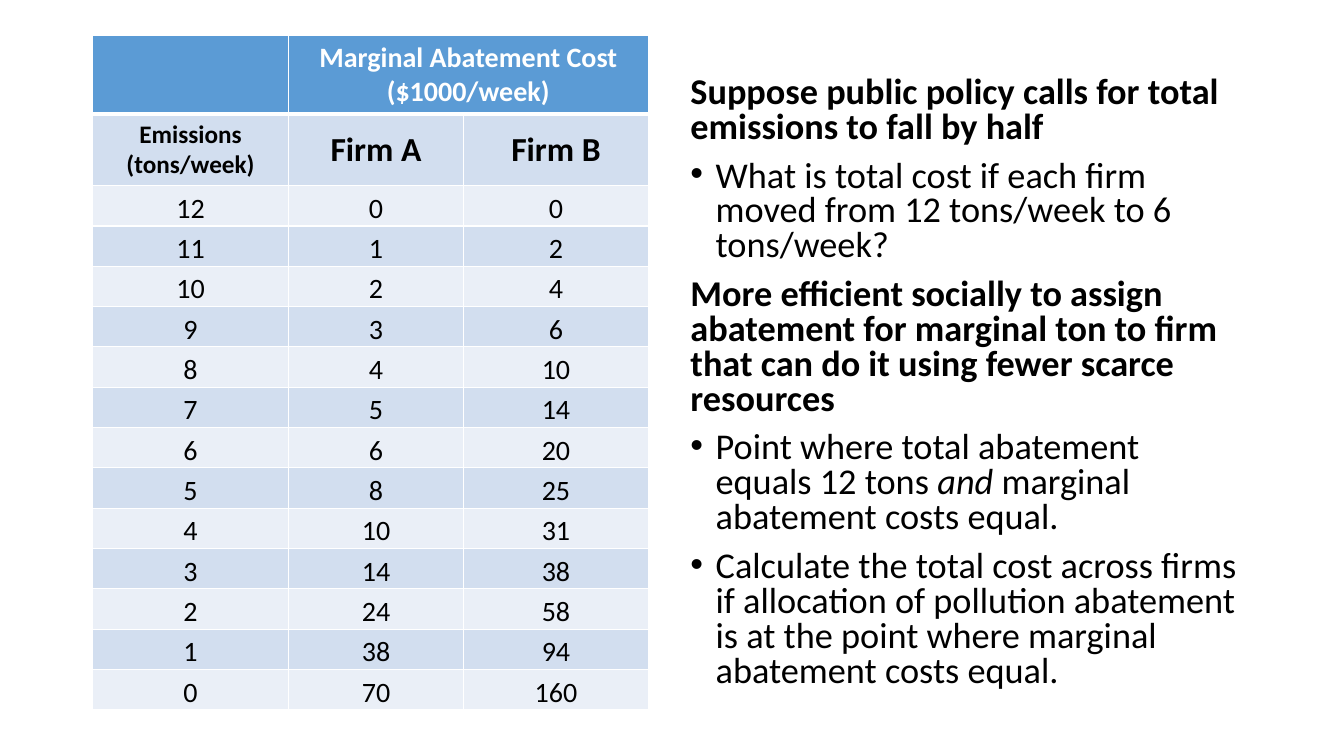
"""Build a slide on marginal abatement costs for two firms."""
import pptx
import pptx.dml.color
import pptx.enum.text
import pptx.oxml
import pptx.oxml.ns
import pptx.util
from lxml import etree

Inches = pptx.util.Inches
Pt = pptx.util.Pt
RGBColor = pptx.dml.color.RGBColor
ANCHOR = pptx.enum.text.MSO_ANCHOR

BLUE = RGBColor(0x5B, 0x9B, 0xD5)
DARK_BAND = RGBColor(0xD2, 0xDE, 0xEF)
LIGHT_BAND = RGBColor(0xEA, 0xEF, 0xF7)
WHITE = RGBColor(0xFF, 0xFF, 0xFF)
BLACK = RGBColor(0x00, 0x00, 0x00)


def style_run(run, size, color, bold):
    run.font.name = "Calibri"
    run.font.size = Pt(size)
    run.font.color.rgb = color
    run.font.bold = bold


def add_border(cell, side, width):
    line = pptx.oxml.parse_xml(
        f'<a:{side} {pptx.oxml.ns.nsdecls("a")} w="{Pt(width)}"><a:solidFill>'
        f'<a:srgbClr val="{WHITE}"/></a:solidFill></a:{side}>')
    cell._tc.get_or_add_tcPr().append(line)


presentation = pptx.Presentation()
presentation.slide_width = Inches(13.33)
presentation.slide_height = Inches(7.5)
slide = presentation.slides.add_slide(presentation.slide_layouts[6])

emissions = range(12, -1, -1)
firm_a_costs = [0, 1, 2, 3, 4, 5, 6, 8, 10, 14, 24, 38, 70]
firm_b_costs = [0, 2, 4, 6, 10, 14, 20, 25, 31, 38, 58, 94, 160]
cost_rows = [
    ("", "Marginal Abatement Cost ($1000/week)", ""),
    ("Emissions (tons/week)", "Firm A", "Firm B"),
    *zip(emissions, firm_a_costs, firm_b_costs),
]

costs = slide.shapes.add_table(
    len(cost_rows), 3, Inches(0.92), Inches(0.35), Inches(5.51), Inches(6.57)).table
costs.horz_banding = False
for column, width in zip(costs.columns, (1.94, 1.74, 1.83)):
    column.width = Inches(width)
for row, height in zip(costs.rows, [0.72, 0.65] + [0.4] * len(emissions)):
    row.height = Inches(height)
costs.cell(0, 1).merge(costs.cell(0, 2))

for r, values in enumerate(cost_rows):
    for c, value in enumerate(values):
        cell = costs.cell(r, c)
        add_border(cell, "lnL", 1)
        add_border(cell, "lnR", 1)
        add_border(cell, "lnT", 3 if r == 1 else 1)
        add_border(cell, "lnB", 3 if r == 0 else 1)
        cell.fill.solid()
        if r == 0:
            cell.fill.fore_color.rgb = BLUE
        else:
            cell.fill.fore_color.rgb = DARK_BAND if r % 2 else LIGHT_BAND
        if value == "":
            continue
        cell.text_frame.text = str(value)
        paragraph = cell.text_frame.paragraphs[0]
        paragraph.alignment = pptx.enum.text.PP_ALIGN.CENTER
        size = 20
        if r == 1:
            size = 24 if c else 18
            cell.vertical_anchor = ANCHOR.MIDDLE if c else ANCHOR.TOP
        elif r > 1:
            cell.vertical_anchor = ANCHOR.BOTTOM
            cell.margin_left = cell.margin_right = Inches(0.07)
            cell.margin_top = cell.margin_bottom = 0
            paragraph.line_spacing = 1.15
        style_run(paragraph.runs[0], size, BLACK if r else WHITE, r < 2)

policy_points = [
    (False, ["Suppose public policy calls for total emissions to fall by half"]),
    (True, ["What is total cost if each firm moved from 12 tons/week to 6 tons/week?"]),
    (False, ["More efficient socially to assign abatement for marginal ton to firm "
             "that can do it using fewer scarce resources"]),
    (True, ["Point where total abatement equals 12 tons ", "and",
            " marginal abatement costs equal."]),
    (True, ["Calculate the total cost across firms if allocation of pollution abatement "
            "is at the point where marginal abatement costs equal."]),
]

policy = slide.shapes.add_textbox(
    Inches(6.75), Inches(0.71), Inches(5.67), Inches(6.48)).text_frame
policy.word_wrap = True
for i, (bulleted, parts) in enumerate(policy_points):
    paragraph = policy.add_paragraph() if i else policy.paragraphs[0]
    paragraph.line_spacing = 0.8
    paragraph.space_before = Pt(10)
    for part in parts:
        run = paragraph.add_run()
        run.text = part
        style_run(run, 25.9, BLACK, not bulleted)
        run.font.italic = part == "and"
    if bulleted:
        properties = paragraph._p.get_or_add_pPr()
        properties.set("marL", str(Inches(0.25)))
        properties.set("indent", str(Inches(-0.25)))
        bullet_font = etree.SubElement(properties, pptx.oxml.ns.qn("a:buFont"))
        bullet_font.set("typeface", "Arial")
        bullet = etree.SubElement(properties, pptx.oxml.ns.qn("a:buChar"))
        bullet.set("char", "•")

presentation.save("out.pptx")
